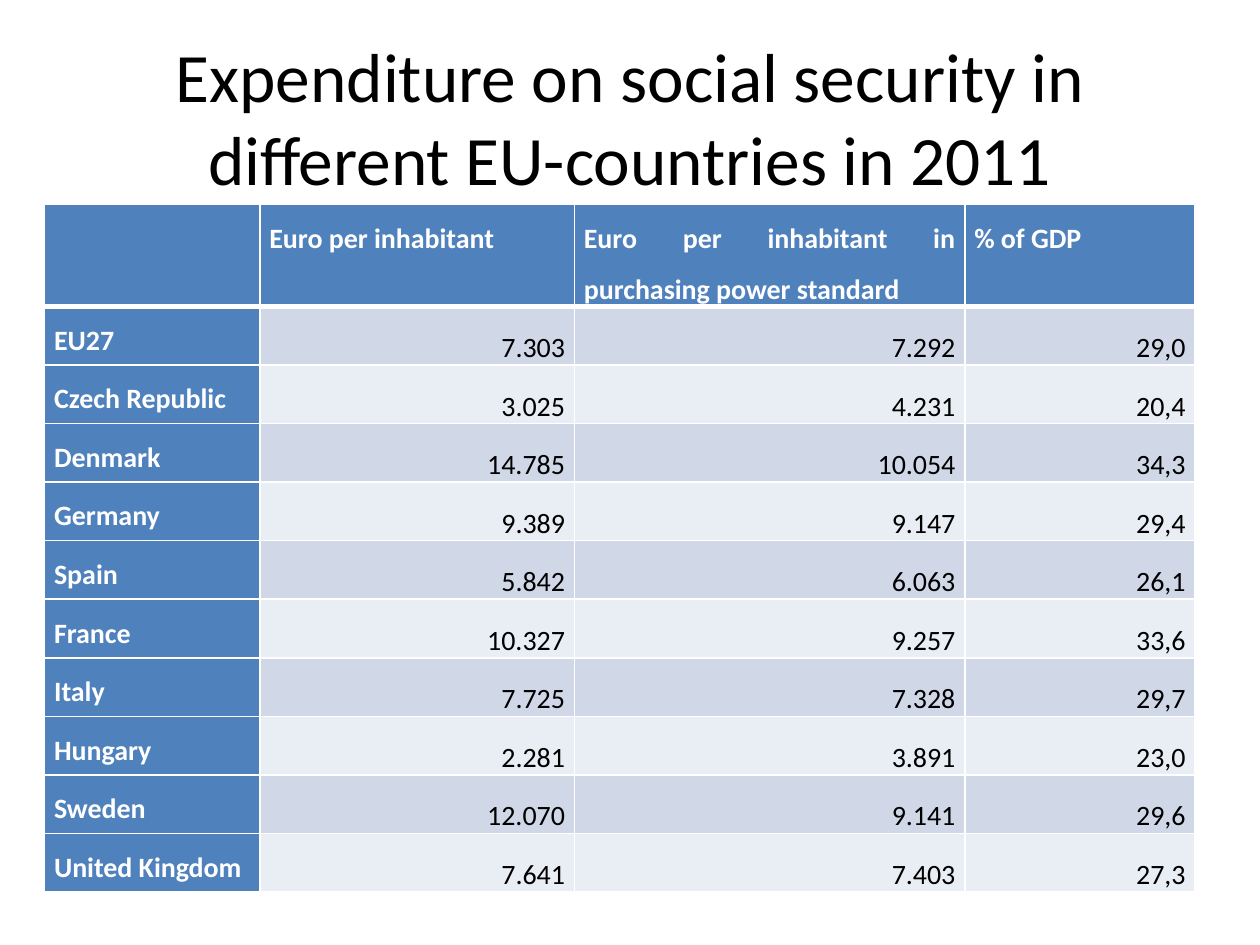
"""Build a slide with a table of social security expenditure in EU countries."""
import pptx
import pptx.dml.color
import pptx.enum.text
import pptx.oxml
import pptx.oxml.ns
import pptx.util

Cm = pptx.util.Cm
Pt = pptx.util.Pt
RGBColor = pptx.dml.color.RGBColor
ALIGN = pptx.enum.text.PP_ALIGN
ANCHOR = pptx.enum.text.MSO_ANCHOR

BLACK = RGBColor(0x00, 0x00, 0x00)
WHITE = RGBColor(0xFF, 0xFF, 0xFF)
BLUE = RGBColor(0x4F, 0x81, 0xBD)
BANDS = [RGBColor(0xD0, 0xD8, 0xE8), RGBColor(0xE9, 0xED, 0xF4)]

TITLE = "Expenditure on social security in different EU-countries in 2011"
ROWS = [
    ["", "Euro per inhabitant", "Euro per inhabitant in purchasing power standard", "% of GDP"],
    ["EU27", "7.303", "7.292", "29,0"],
    ["Czech Republic", "3.025", "4.231", "20,4"],
    ["Denmark", "14.785", "10.054", "34,3"],
    ["Germany", "9.389", "9.147", "29,4"],
    ["Spain", "5.842", "6.063", "26,1"],
    ["France", "10.327", "9.257", "33,6"],
    ["Italy", "7.725", "7.328", "29,7"],
    ["Hungary", "2.281", "3.891", "23,0"],
    ["Sweden", "12.070", "9.141", "29,6"],
    ["United Kingdom", "7.641", "7.403", "27,3"],
]
COLUMN_WIDTHS = [4.34, 6.34, 7.87, 4.64]
HEADER_HEIGHT, BODY_HEIGHT = 2.06, 1.18

CELL_FORMAT = {"margin_left": Cm(0.19), "margin_right": Cm(0.19), "margin_top": 0, "margin_bottom": 0}
HEADING_PARA = {"alignment": ALIGN.JUSTIFY, "line_spacing": 1.5}
VALUE_PARA = {"alignment": ALIGN.RIGHT, "line_spacing": 1.15}


def write(para, text, size, color, bold, para_format):
    for name, value in para_format.items():
        setattr(para, name, value)
    span = para.add_run()
    span.text = text
    for name, value in {"name": "Calibri", "size": Pt(size), "bold": bold}.items():
        setattr(span.font, name, value)
    span.font.color.rgb = color


def add_border(cell, side, points):
    cell._tc.get_or_add_tcPr().append(pptx.oxml.parse_xml(
        f'<a:ln{side} {pptx.oxml.ns.nsdecls("a")} w="{Pt(points)}">'
        f'<a:solidFill><a:srgbClr val="{WHITE}"/></a:solidFill></a:ln{side}>'))


deck = pptx.Presentation()
deck.slide_width, deck.slide_height = Cm(25.4), Cm(19.05)
page = deck.slides.add_slide(deck.slide_layouts[6])

box = page.shapes.add_textbox(Cm(1.27), Cm(0.76), Cm(22.86), Cm(3.18))
for name, value in {"word_wrap": True, "vertical_anchor": ANCHOR.MIDDLE}.items():
    setattr(box.text_frame, name, value)
write(box.text_frame.paragraphs[0], TITLE, 39.6, BLACK, False, {"alignment": ALIGN.CENTER})

table_height = HEADER_HEIGHT + BODY_HEIGHT * (len(ROWS) - 1)
table = page.shapes.add_table(
    len(ROWS), len(COLUMN_WIDTHS), Cm(0.9), Cm(4.12), Cm(sum(COLUMN_WIDTHS)), Cm(table_height)).table
table.first_col = True
for column, width in zip(table.columns, COLUMN_WIDTHS):
    column.width = Cm(width)

for r, texts in enumerate(ROWS):
    table.rows[r].height = Cm(BODY_HEIGHT if r else HEADER_HEIGHT)
    for c, text in enumerate(texts):
        cell = table.cell(r, c)
        is_heading = r == 0 or c == 0
        for name, value in CELL_FORMAT.items():
            setattr(cell, name, value)
        cell.vertical_anchor = ANCHOR.TOP if is_heading else ANCHOR.BOTTOM
        for side in "LRTB":
            below_header = (r, side) in [(0, "B"), (1, "T")]
            add_border(cell, side, 3 if below_header else 1)
        cell.fill.solid()
        cell.fill.fore_color.rgb = BLUE if is_heading else BANDS[(r - 1) % 2]
        if text:
            write(cell.text_frame.paragraphs[0], text, 16, WHITE if is_heading else BLACK,
                  is_heading, HEADING_PARA if is_heading else VALUE_PARA)

deck.save("out.pptx")
